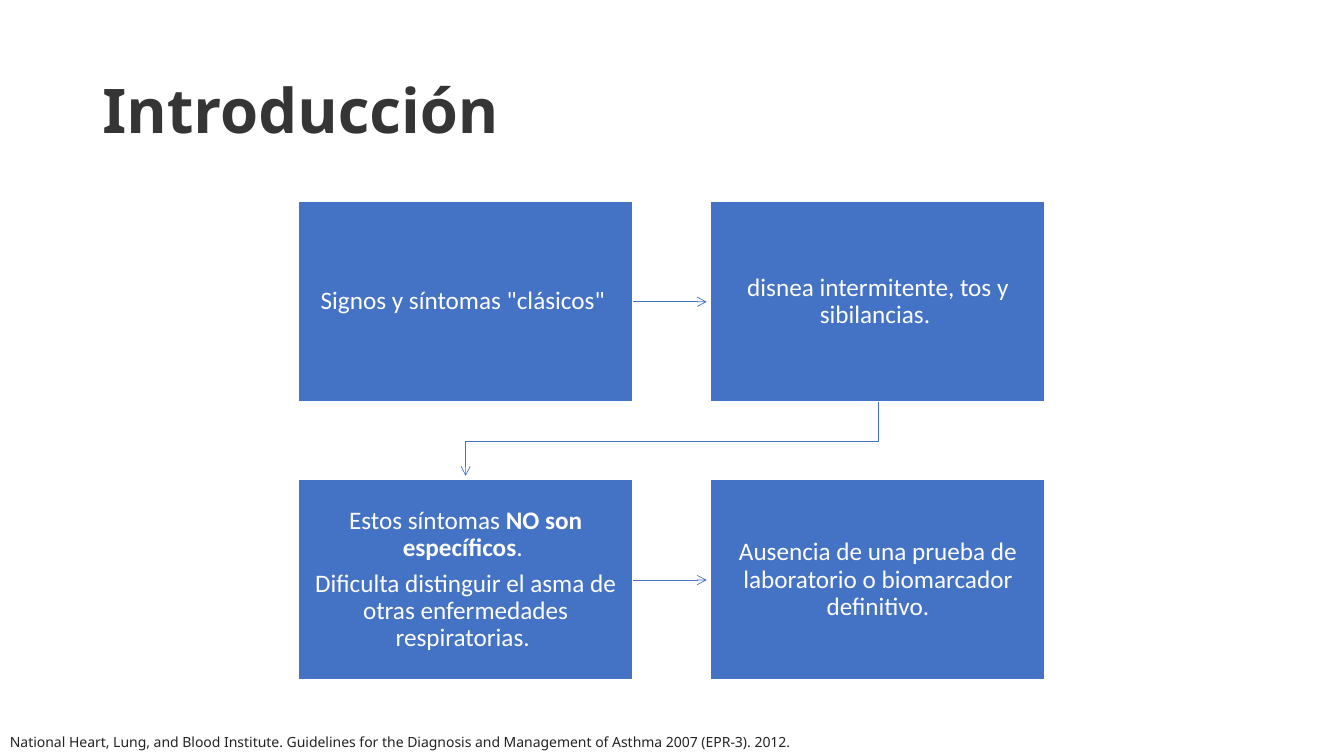
"""Build the introduction slide: four linked boxes about the symptoms of asthma."""
from lxml import etree
from pptx import Presentation
from pptx.dml.color import RGBColor
from pptx.enum.shapes import MSO_CONNECTOR, MSO_SHAPE
from pptx.enum.text import MSO_ANCHOR, PP_ALIGN
from pptx.oxml.ns import qn
from pptx.util import Cm, Pt

RECTANGLE = MSO_SHAPE.RECTANGLE
STRAIGHT = MSO_CONNECTOR.STRAIGHT
MIDDLE, TOP = MSO_ANCHOR.MIDDLE, MSO_ANCHOR.TOP
CENTER, LEFT = PP_ALIGN.CENTER, PP_ALIGN.LEFT
RIGHT_SIDE = 3

TITLE = "Introducción"
SOURCE = ("National Heart, Lung, and Blood Institute. Guidelines for the Diagnosis "
          "and Management of Asthma 2007 (EPR-3). 2012.")
STEPS = [
    [[("Signos y síntomas \"clásicos\" ", False)]],
    [[("disnea intermitente, tos y sibilancias. ", False)]],
    [[("Estos síntomas ", False), ("NO son específicos", True), (". ", False)],
     [("Dificulta distinguir el asma de otras enfermedades respiratorias. ", False)]],
    [[("Ausencia de una prueba de laboratorio o biomarcador definitivo.", False)]],
]

THEME = {
    "heading_font": "Noto Sans", "body_font": "Calibri",
    "title": RGBColor(0x35, 0x35, 0x35), "source": RGBColor(0x23, 0x23, 0x23),
    "blue": RGBColor(0x44, 0x72, 0xC4), "white": RGBColor(0xFF, 0xFF, 0xFF),
    "title_size": Pt(44), "step_size": Pt(18), "source_size": Pt(10),
    "border": Pt(1), "arrow": Pt(0.5), "paragraph_gap": Pt(6.3),
}

COLUMNS = 2
GRID_LEFT, GRID_TOP = Cm(7.52), Cm(5.08)
BOX_WIDTH, BOX_HEIGHT = Cm(8.43), Cm(5.05)
GAP, CLEARANCE = Cm(1.96), Cm(0.1)
INSET_X, INSET_Y = Cm(0.41), Cm(0.43)


def style_font(font, name, size, color, bold=False):
    font.name, font.size, font.bold = name, size, bold
    font.color.rgb = color


def add_label(slide, text, box, anchor, font_style, line_spacing=1.0):
    text_frame = slide.shapes.add_textbox(*box).text_frame
    text_frame.word_wrap = True
    text_frame.vertical_anchor = anchor
    text_frame.text = text
    paragraph = text_frame.paragraphs[0]
    paragraph.alignment = LEFT
    paragraph.line_spacing = line_spacing
    style_font(paragraph.runs[0].font, *font_style)


def add_step(slide, index, paragraphs):
    row, column = divmod(index, COLUMNS)
    shape = slide.shapes.add_shape(
        RECTANGLE, GRID_LEFT + column * (BOX_WIDTH + GAP),
        GRID_TOP + row * (BOX_HEIGHT + GAP), BOX_WIDTH, BOX_HEIGHT)
    shape.shadow.inherit = False
    shape.fill.solid()
    shape.fill.fore_color.rgb = THEME["blue"]
    shape.line.color.rgb = THEME["white"]
    shape.line.width = THEME["border"]
    text_frame = shape.text_frame
    text_frame.word_wrap = True
    text_frame.vertical_anchor = MIDDLE
    text_frame.margin_left = text_frame.margin_right = INSET_X
    text_frame.margin_top = text_frame.margin_bottom = INSET_Y
    for number, pieces in enumerate(paragraphs):
        paragraph = text_frame.add_paragraph() if number else text_frame.paragraphs[0]
        paragraph.alignment = CENTER
        paragraph.line_spacing = 0.9
        if number:
            paragraph.space_before = THEME["paragraph_gap"]
        for text, bold in pieces:
            run = paragraph.add_run()
            run.text = text
            style_font(run.font, THEME["body_font"], THEME["step_size"],
                       THEME["white"], bold)
    return shape


def style_arrow(arrow):
    arrow.line.color.rgb = THEME["blue"]
    arrow.line.width = THEME["arrow"]
    properties = arrow.line._get_or_add_ln()
    etree.SubElement(properties, qn("a:tailEnd"), type="arrow")


def add_row_arrow(slide, start, end):
    middle = start.top + start.height // 2
    arrow = slide.shapes.add_connector(
        STRAIGHT, start.left + start.width, middle, end.left - CLEARANCE, middle)
    arrow.begin_connect(start, RIGHT_SIDE)
    style_arrow(arrow)
    etree.SubElement(arrow._element.spPr, qn("a:effectLst"))


def add_turn_arrow(slide, start, end):
    start_x, end_x = start.left + start.width // 2, end.left + end.width // 2
    start_y = start.top + start.height
    turn_y = (start_y + end.top) // 2
    builder = slide.shapes.build_freeform(start_x, start_y)
    builder.add_line_segments(
        [(start_x, turn_y), (end_x, turn_y), (end_x, end.top - CLEARANCE)], close=False)
    arrow = builder.convert_to_shape()
    arrow.shadow.inherit = False
    arrow.fill.background()
    style_arrow(arrow)


def main():
    presentation = Presentation()
    presentation.slide_width, presentation.slide_height = Cm(33.87), Cm(19.05)
    slide = presentation.slides.add_slide(presentation.slide_layouts[6])
    add_label(slide, TITLE, (Cm(2.33), Cm(1.01), Cm(29.21), Cm(3.68)), MIDDLE,
              (THEME["heading_font"], THEME["title_size"], THEME["title"], True), 0.9)
    boxes = [add_step(slide, index, step) for index, step in enumerate(STEPS)]
    for index, (start, end) in enumerate(zip(boxes, boxes[1:]), 1):
        add_arrow = add_row_arrow if index % COLUMNS else add_turn_arrow
        add_arrow(slide, start, end)
    add_label(slide, SOURCE, (Cm(0), Cm(18.36), Cm(33.73), Cm(0.69)), TOP,
              (THEME["heading_font"], THEME["source_size"], THEME["source"]))
    presentation.save("out.pptx")


if __name__ == "__main__":
    main()
